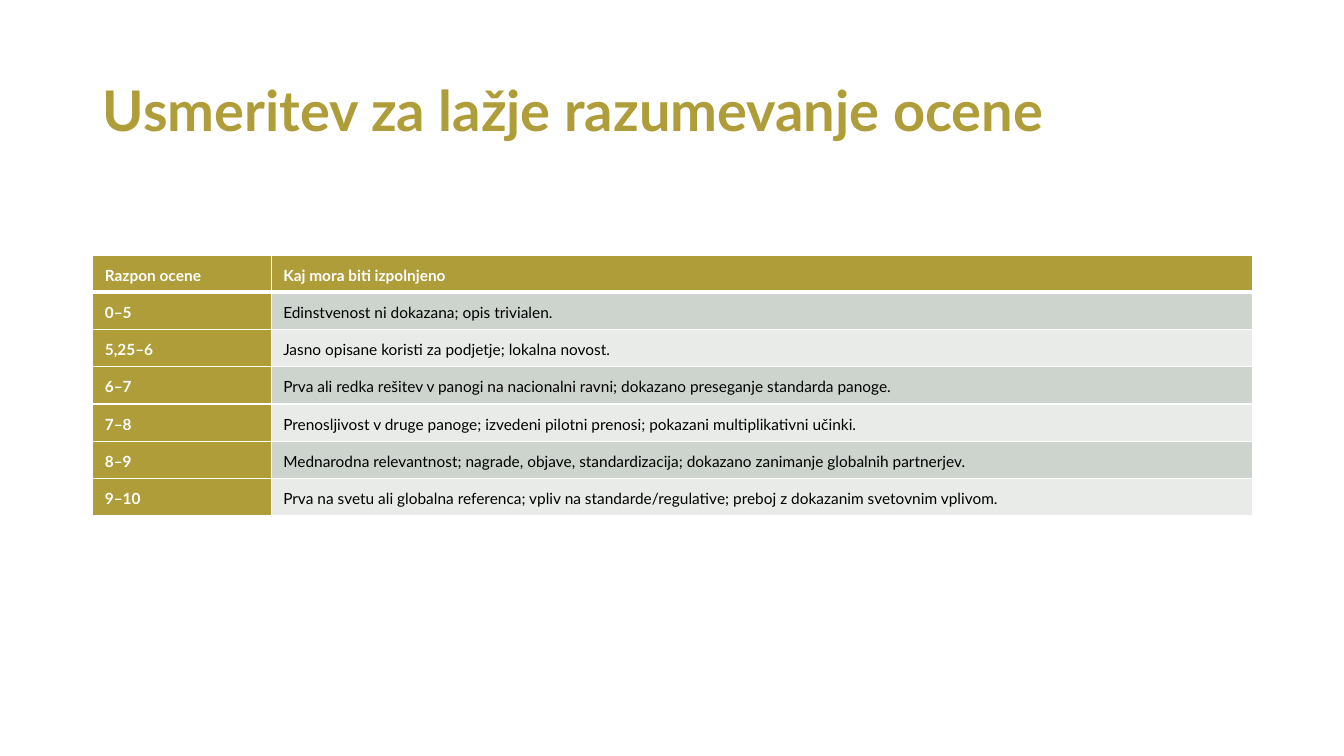
"""Build a slide with a table explaining what each score range requires."""
from dataclasses import dataclass

from lxml.etree import SubElement
from pptx import Presentation
from pptx.dml.color import RGBColor as Rgb
from pptx.enum.text import MSO_ANCHOR as Anchor
from pptx.oxml.ns import qn
from pptx.util import Inches, Pt

TITLE = "Usmeritev za lažje razumevanje ocene"
HEADER = ("Razpon ocene", "Kaj mora biti izpolnjeno")
CRITERIA = [
    ("0–5", "Edinstvenost ni dokazana; opis trivialen."),
    ("5,25–6", "Jasno opisane koristi za podjetje; lokalna novost."),
    ("6–7", "Prva ali redka rešitev v panogi na nacionalni ravni; "
            "dokazano preseganje standarda panoge."),
    ("7–8", "Prenosljivost v druge panoge; izvedeni pilotni prenosi; "
            "pokazani multiplikativni učinki."),
    ("8–9", "Mednarodna relevantnost; nagrade, objave, standardizacija; "
            "dokazano zanimanje globalnih partnerjev."),
    ("9–10", "Prva na svetu ali globalna referenca; vpliv na standarde/regulative; "
             "preboj z dokazanim svetovnim vplivom."),
]


@dataclass(frozen=True)
class Theme:
    """Hold the colours, font and sizes of the slide."""
    font: str = "Lato"
    gold: str = "AE9D39"
    white: str = "FFFFFF"
    black: str = "000000"
    bands: tuple = ("CCD4CD", "E8EBE8")
    title_size: int = 40
    table_size: int = 11
    thin: int = 1
    thick: int = 3


THEME = Theme()
LEFT = 0.92
TITLE_BOX = (LEFT, 0.39, 10.98, 1.46)
TABLE_TOP = 2.53
COLUMN_WIDTHS = (1.77, 9.73)
ROW_HEIGHT = 0.37


def write(paragraph, text, size, color, bold):
    """Add one formatted run to a paragraph."""
    run = paragraph.add_run()
    run.text = text
    run.font.name = THEME.font
    run.font.size = Pt(size)
    run.font.bold = bold
    run.font.color.rgb = Rgb.from_string(color)


def add_borders(cell, top, bottom):
    """Draw white borders with the given top and bottom widths."""
    properties = cell._tc.get_or_add_tcPr()
    widths = {"L": THEME.thin, "R": THEME.thin, "T": top, "B": bottom}
    for side, width in widths.items():
        border = SubElement(properties, qn(f"a:ln{side}"), w=str(Pt(width)))
        fill = SubElement(border, qn("a:solidFill"))
        SubElement(fill, qn("a:srgbClr"), val=THEME.white)


def add_title(slide):
    """Place the slide title."""
    frame = slide.shapes.add_textbox(*map(Inches, TITLE_BOX)).text_frame
    frame.word_wrap = True
    frame.vertical_anchor = Anchor.MIDDLE
    paragraph = frame.paragraphs[0]
    paragraph.line_spacing = 0.9
    write(paragraph, TITLE, THEME.title_size, THEME.gold, True)


def fill_cell(cell, text, row, column):
    """Style one cell by its place in the table and write its text."""
    emphasised = row == 0 or column == 0
    add_borders(cell, THEME.thick if row == 1 else THEME.thin,
                THEME.thick if row == 0 else THEME.thin)
    cell.fill.solid()
    shade = THEME.gold if emphasised else THEME.bands[(row - 1) % 2]
    cell.fill.fore_color.rgb = Rgb.from_string(shade)
    cell.margin_left = Inches(0.12)
    cell.margin_top = cell.margin_right = Inches(0.08)
    cell.margin_bottom = Inches(0.07)
    paragraph = cell.text_frame.paragraphs[0]
    paragraph.line_spacing = 1.15
    paragraph.space_after = Pt(10)
    color = THEME.white if emphasised else THEME.black
    write(paragraph, text, THEME.table_size, color, emphasised)


def add_criteria(slide):
    """Place the table of score ranges."""
    rows = [HEADER, *CRITERIA]
    box = (LEFT, TABLE_TOP, sum(COLUMN_WIDTHS), ROW_HEIGHT * len(rows))
    table = slide.shapes.add_table(len(rows), len(HEADER), *map(Inches, box)).table
    for column, width in zip(table.columns, COLUMN_WIDTHS):
        column.width = Inches(width)
    for r, texts in enumerate(rows):
        table.rows[r].height = Inches(ROW_HEIGHT)
        for c, text in enumerate(texts):
            fill_cell(table.cell(r, c), text, r, c)


def main():
    """Create and save the presentation."""
    deck = Presentation()
    deck.slide_width, deck.slide_height = Inches(13.33), Inches(7.5)
    slide = deck.slides.add_slide(deck.slide_layouts[6])
    add_title(slide)
    add_criteria(slide)
    deck.save("out.pptx")


if __name__ == "__main__":
    main()
